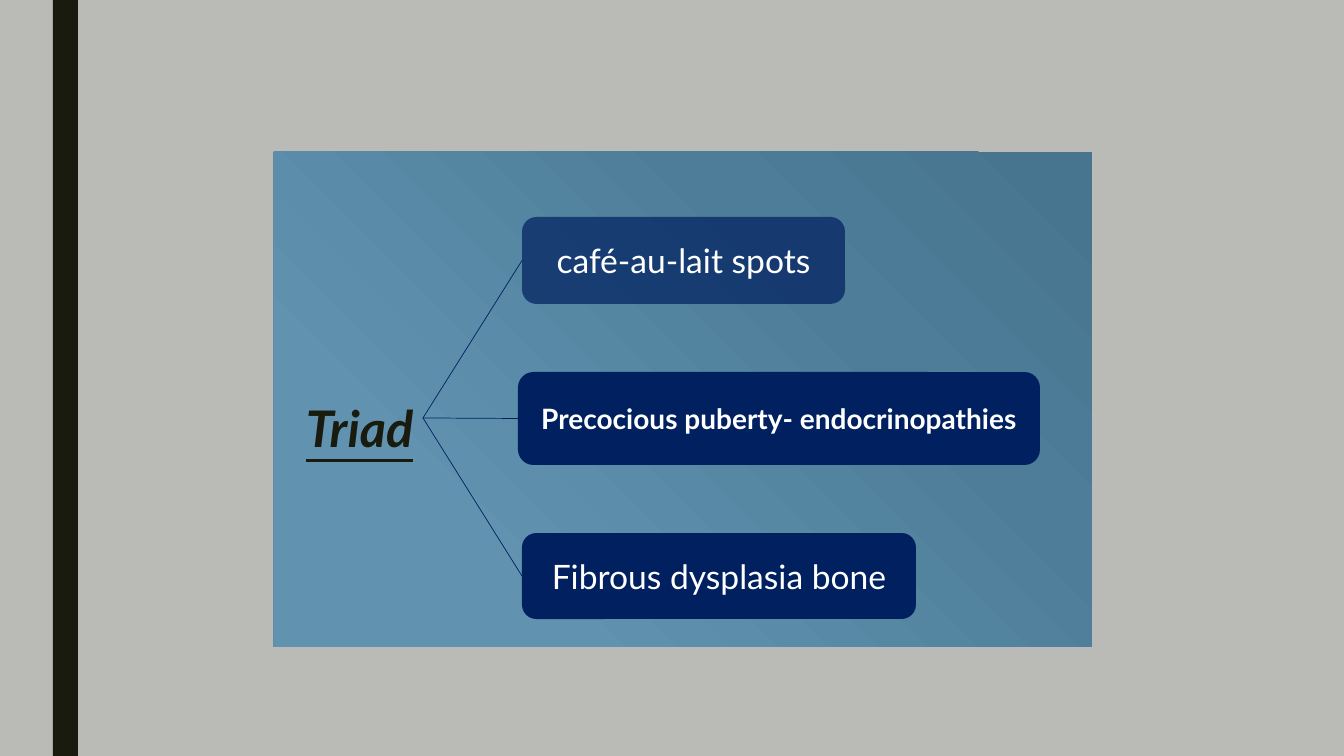
import pptx
import pptx.util
import pptx.dml.color
import pptx.enum.shapes
import pptx.enum.text
import pptx.oxml
import pptx.oxml.ns

SCALE = 914400 / 100.8
COLORS = {
    "background": "BABBB6",
    "ink": "191B0E",
    "navy": "002060",
    "white": "FFFFFF",
}
PANEL_STOPS = [(0, "6193B0"), (23, "6193B0"), (69, "4D7D99"), (97, "47758F")]
SHAPES = pptx.enum.shapes.MSO_SHAPE


def px(length):
    return pptx.util.Emu(round(length * SCALE))


def color(name):
    return pptx.dml.color.RGBColor.from_string(COLORS[name])


presentation = pptx.Presentation()
presentation.slide_width = px(1344)
presentation.slide_height = px(756)
slide = presentation.slides.add_slide(presentation.slide_layouts[6])
slide.background.fill.solid()
slide.background.fill.fore_color.rgb = color("background")

bar = slide.shapes.add_shape(SHAPES.RECTANGLE, px(53), px(0), px(25), px(756))
bar.shadow.inherit = False
bar.fill.solid()
bar.fill.fore_color.rgb = color("ink")
bar.line.fill.background()

panel = slide.shapes.add_shape(SHAPES.RECTANGLE, px(274), px(152), px(818), px(495))
panel.shadow.inherit = False
panel.line.fill.background()
stops = "".join(
    f'<a:gs pos="{position * 1000}"><a:srgbClr val="{value}"/></a:gs>'
    for position, value in PANEL_STOPS
)
gradient = pptx.oxml.parse_xml(
    f'<a:gradFill {pptx.oxml.ns.nsdecls("a")} rotWithShape="1"><a:gsLst>{stops}</a:gsLst>'
    '<a:path path="circle"><a:fillToRect t="100000" r="100000"/></a:path></a:gradFill>'
)
panel._element.spPr.find(pptx.oxml.ns.qn("a:prstGeom")).addnext(gradient)

text_frame = panel.text_frame
text_frame.text = "Triad"
text_frame.vertical_anchor = pptx.enum.text.MSO_ANCHOR.TOP
text_frame.margin_left = px(32)
text_frame.margin_top = px(245)
paragraph = text_frame.paragraphs[0]
paragraph.alignment = pptx.enum.text.PP_ALIGN.LEFT
font = paragraph.runs[0].font
font.name = "Lato"
font.size = pptx.util.Pt(36)
font.bold = font.italic = font.underline = True
font.color.rgb = color("ink")

features = [
    ("café-au-lait spots", 522, 217, 323, 87, 24, False, 71),
    ("Precocious puberty- endocrinopathies", 518, 372, 522, 93, 20, True, 100),
    ("Fibrous dysplasia bone", 522, 533, 394, 86, 24, False, 100),
]
for text, left, top, width, height, size, bold, opacity in features:
    box = slide.shapes.add_shape(
        SHAPES.ROUNDED_RECTANGLE, px(left), px(top), px(width), px(height)
    )
    box.shadow.inherit = False
    box.fill.solid()
    box.fill.fore_color.rgb = color("navy")
    box.line.fill.background()
    if opacity < 100:
        fill_color = box._element.spPr.find(".//" + pptx.oxml.ns.qn("a:srgbClr"))
        alpha = fill_color.makeelement(pptx.oxml.ns.qn("a:alpha"), {"val": str(opacity * 1000)})
        fill_color.append(alpha)

    text_frame = box.text_frame
    text_frame.text = text
    text_frame.vertical_anchor = pptx.enum.text.MSO_ANCHOR.MIDDLE
    paragraph = text_frame.paragraphs[0]
    paragraph.alignment = pptx.enum.text.PP_ALIGN.CENTER
    font = paragraph.runs[0].font
    font.name = "Lato"
    font.size = pptx.util.Pt(size)
    font.bold = bold
    font.color.rgb = color("white")

    branch = slide.shapes.add_connector(
        pptx.enum.shapes.MSO_CONNECTOR.STRAIGHT,
        px(423), px(418), px(left), px(top + height / 2),
    )
    branch.end_connect(box, 1)
    branch.line.color.rgb = color("navy")
    branch.line.width = pptx.util.Pt(0.5)
    properties = branch._element.spPr
    properties.append(properties.makeelement(pptx.oxml.ns.qn("a:effectLst"), {}))

presentation.save("out.pptx")
